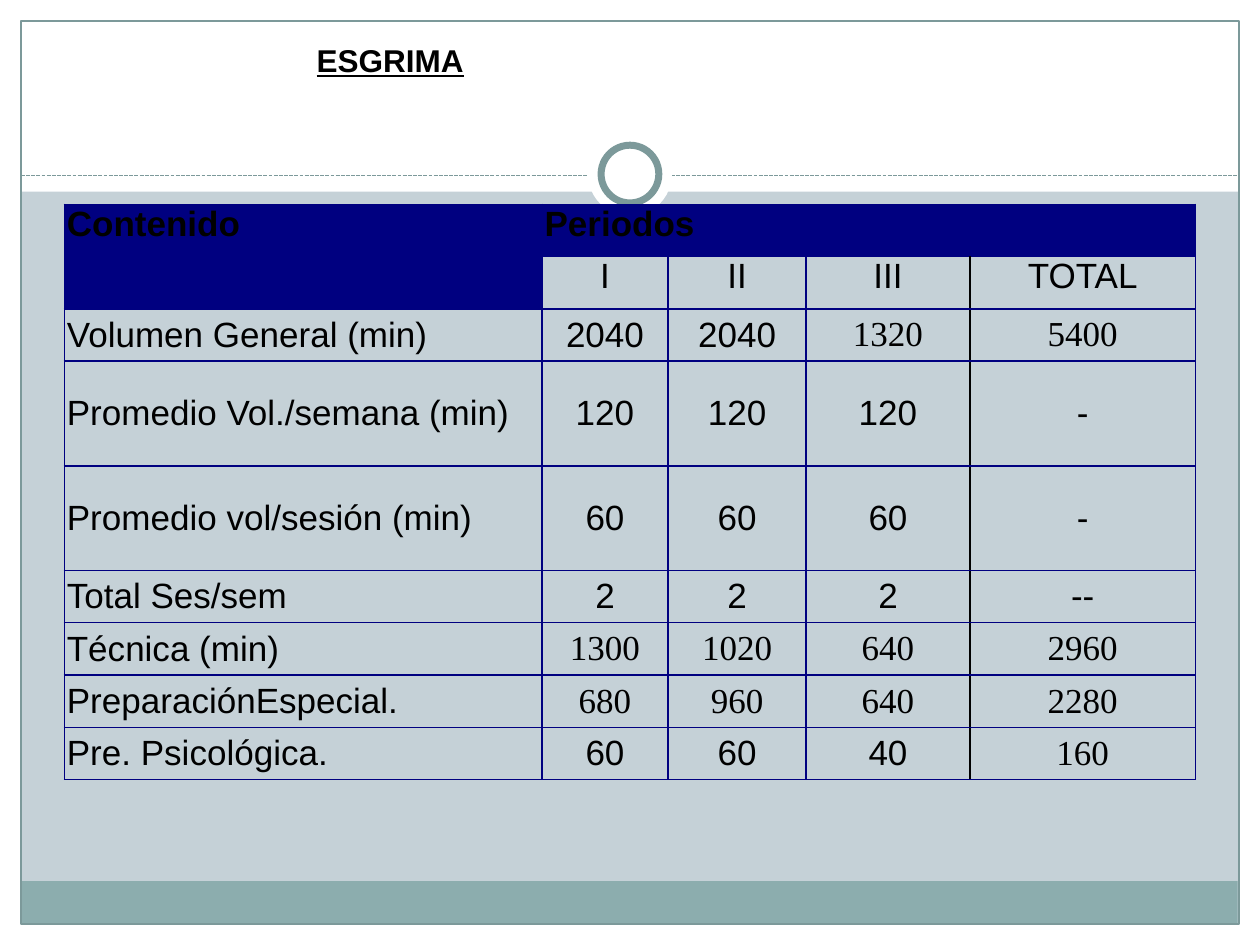
from lxml import etree
from pptx import Presentation, util as u
from pptx.dml.color import RGBColor
from pptx.enum import dml, shapes, text
from pptx.oxml.ns import qn

Pt = u.Pt
WHITE = RGBColor(0xFF, 0xFF, 0xFF)
BLACK = RGBColor(0, 0, 0)
NAVY = RGBColor(0, 0, 0x80)
MIST = RGBColor(0xC5, 0xD1, 0xD7)
TEAL = RGBColor(0x8C, 0xAD, 0xAE)
SLATE = RGBColor(0x7C, 0x99, 0x9A)

SPORT = "ESGRIMA"
ROWS = [
    ("Contenido", "Periodos", "", "", ""),
    ("", "I", "II", "III", "TOTAL"),
    ("Volumen General (min)", "2040", "2040", "1320", "5400"),
    ("Promedio Vol./semana (min)", "120", "120", "120", "-"),
    ("Promedio vol/sesión (min)", "60", "60", "60", "-"),
    ("Total Ses/sem", "2", "2", "2", "--"),
    ("Técnica (min)", "1300", "1020", "640", "2960"),
    ("PreparaciónEspecial.", "680", "960", "640", "2280"),
    ("Pre. Psicológica.", "60", "60", "40", "160"),
]
SERIF_COLUMNS = {2: (3, 4), 6: (1, 2, 3, 4), 7: (1, 2, 3, 4), 8: (4,)}
COLUMN_WIDTHS = [273, 72, 79, 93.5, 129]
ROW_HEIGHT = 29.9
TALL_ROWS = (3, 4)
WIDTH, HEIGHT, MARGIN = 720, 540, 12

RECT, OVAL = shapes.MSO_SHAPE.RECTANGLE, shapes.MSO_SHAPE.OVAL
FRAME = [
    (RECT, (0, 0, WIDTH, MARGIN)),
    (RECT, (0, HEIGHT - MARGIN, WIDTH, MARGIN)),
    (RECT, (0, 0, MARGIN, HEIGHT)),
    (RECT, (WIDTH - MARGIN, 0, MARGIN, HEIGHT)),
]


def apply(target, formats):
    for key, value in formats.items():
        setattr(target, key, value)


def style_font(font, **formats):
    apply(font, formats)
    font.color.rgb = BLACK


def add_decor(kind, box, fill=WHITE, line_width=0):
    decor = slide.shapes.add_shape(kind, *map(Pt, box))
    decor.shadow.inherit = False
    if fill is None:
        decor.fill.background()
    else:
        decor.fill.solid()
        decor.fill.fore_color.rgb = fill
    if line_width:
        decor.line.color.rgb = SLATE
        decor.line.width = Pt(line_width)
    else:
        decor.line.fill.background()


def add_borders(cell, column):
    sides = {"lnL": column == 4, "lnR": column == 3, "lnT": False, "lnB": False}
    properties = cell._tc.get_or_add_tcPr()
    for place, (side, is_black) in enumerate(sides.items()):
        border = etree.Element(qn("a:" + side), w=str(Pt(1)))
        fill = etree.SubElement(border, qn("a:solidFill"))
        etree.SubElement(fill, qn("a:srgbClr"), val=str(BLACK if is_black else NAVY))
        properties.insert(place, border)


def fill_cell(cell, row, column, wording):
    is_header = row == 0 or (row == 1 and column == 0)
    apply(cell, {
        "margin_left": Pt(1.5), "margin_right": Pt(1.5),
        "margin_top": 0, "margin_bottom": 0,
        "vertical_anchor": text.MSO_ANCHOR.TOP if row < 2 else text.MSO_ANCHOR.MIDDLE,
    })
    if is_header:
        cell.fill.solid()
        cell.fill.fore_color.rgb = NAVY
    else:
        cell.fill.background()
    add_borders(cell, column)
    if wording:
        paragraph = cell.text_frame.paragraphs[0]
        justified = is_header or column == 0
        paragraph.alignment = text.PP_ALIGN.JUSTIFY if justified else text.PP_ALIGN.CENTER
        run = paragraph.add_run()
        run.text = wording
        serif = column in SERIF_COLUMNS.get(row, ())
        style_font(run.font, name="Times New Roman" if serif else "Arial",
                   size=Pt(20), bold=is_header)


deck = Presentation()
apply(deck, {"slide_width": Pt(WIDTH), "slide_height": Pt(HEIGHT)})
slide = deck.slides.add_slide(deck.slide_layouts[5])
slide.background.fill.solid()
slide.background.fill.fore_color.rgb = MIST

add_decor(RECT, (0, 0, WIDTH, 109.5))
divider = slide.shapes.add_connector(
    shapes.MSO_CONNECTOR.STRAIGHT, Pt(MARGIN), Pt(100.5), Pt(WIDTH - MARGIN), Pt(100.5))
divider.line.color.rgb = SLATE
apply(divider.line, {"width": Pt(0.75), "dash_style": dml.MSO_LINE.SQUARE_DOT})
etree.SubElement(divider._element.spPr, qn("a:effectLst"))
add_decor(OVAL, (336, 75.5, 48, 48))
add_decor(OVAL, (343.5, 83, 33, 33), line_width=4)
for kind, box in FRAME:
    add_decor(kind, box)
add_decor(RECT, (11.75, 503.5, 695.5, 24.25), TEAL)
add_decor(RECT, (MARGIN, MARGIN, WIDTH - 2 * MARGIN, HEIGHT - 2 * MARGIN), None, 0.75)

title = slide.shapes.title
slide.shapes._spTree.append(title._element)
apply(title, {"left": Pt(36.5), "top": Pt(20), "width": Pt(373), "height": Pt(73)})
title.text_frame.text = SPORT
apply(title.text_frame, {"vertical_anchor": text.MSO_ANCHOR.TOP, "word_wrap": True,
                         "auto_size": text.MSO_AUTO_SIZE.NONE})
heading = title.text_frame.paragraphs[0]
heading.alignment = text.PP_ALIGN.CENTER
style_font(heading.runs[0].font, name="Arial", size=Pt(18), bold=True, underline=True)

heights = [ROW_HEIGHT * (2 if row in TALL_ROWS else 1) for row in range(len(ROWS))]
plan = slide.shapes.add_table(
    len(ROWS), len(COLUMN_WIDTHS), Pt(36.75), Pt(116.75),
    Pt(sum(COLUMN_WIDTHS)), Pt(sum(heights))).table
apply(plan, {"first_row": False, "horz_banding": False})
for column, width in zip(plan.columns, COLUMN_WIDTHS):
    column.width = Pt(width)
for row, height in zip(plan.rows, heights):
    row.height = Pt(height)
plan.cell(0, 0).merge(plan.cell(1, 0))
plan.cell(0, 1).merge(plan.cell(0, 4))
for row, wordings in enumerate(ROWS):
    for column, wording in enumerate(wordings):
        fill_cell(plan.cell(row, column), row, column, wording)

deck.save("out.pptx")
